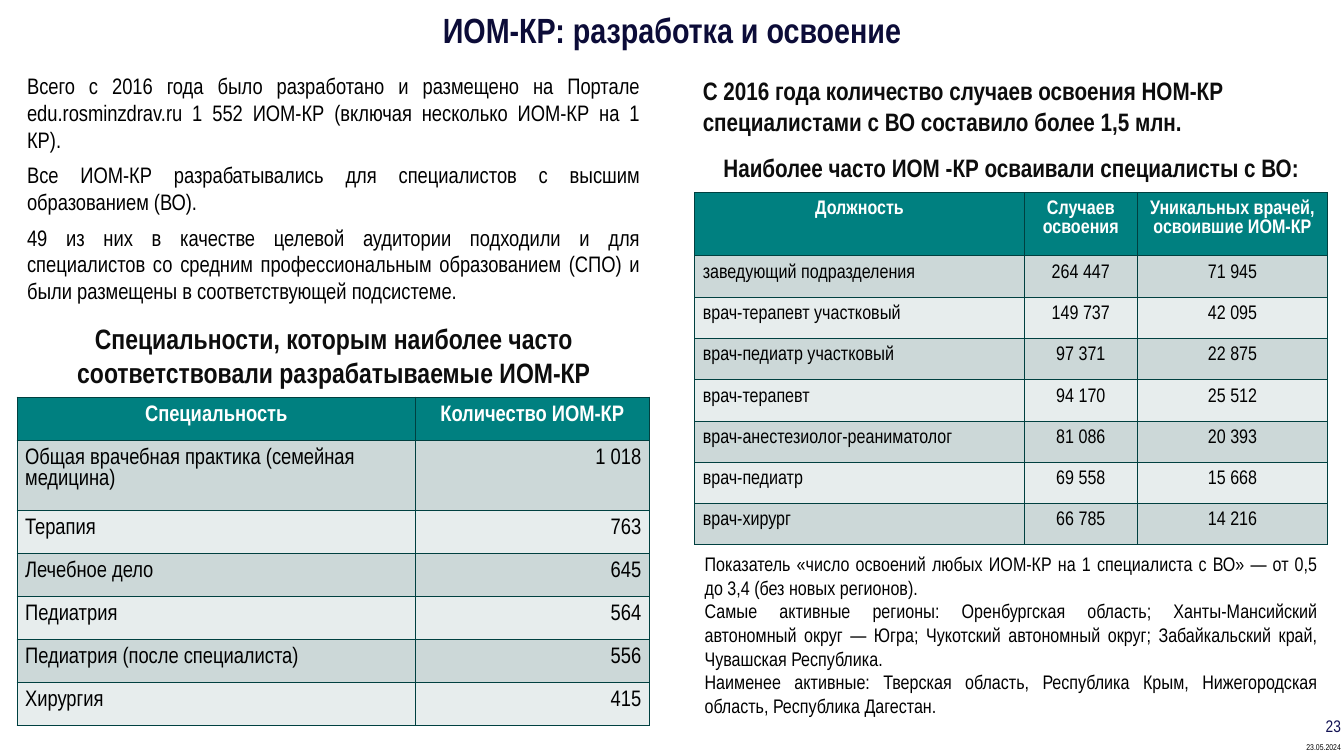
from dataclasses import dataclass

from lxml import etree
from pptx import Presentation
from pptx.dml.color import RGBColor
from pptx.enum.text import MSO_ANCHOR, MSO_AUTO_SIZE, PP_ALIGN
from pptx.oxml.ns import qn
from pptx.slide import Slide
from pptx.table import _Cell
from pptx.text.text import _Paragraph
from pptx.util import Inches, Pt

LEFT, CENTER, RIGHT, JUSTIFY = PP_ALIGN.LEFT, PP_ALIGN.CENTER, PP_ALIGN.RIGHT, PP_ALIGN.JUSTIFY
TOP, MIDDLE = MSO_ANCHOR.TOP, MSO_ANCHOR.MIDDLE
GROW = MSO_AUTO_SIZE.SHAPE_TO_FIT_TEXT

FONT = "Arial Narrow"
COLORS = {
    "title": "0C0C38",
    "heading": "0D0D0D",
    "text": "000000",
    "number": "131354",
    "header": "008080",
    "header_text": "FFFFFF",
    "odd": "CCD8D8",
    "even": "E7EDED",
    "border": "004040",
}
LEFT_X, RIGHT_X, COLUMN_W = 0.17, 6.89, 6.28
ROW_H = 0.41
TIGHT = (0.08, 0.08, 0.08, 0.08)
BODY = (0.1, 0.05, 0.1, 0.05)
FOOTER = (0.04, 0.04, 0.04, 0.04)


@dataclass
class TextBlock:
    box: tuple[float, float, float, float]
    paragraphs: list[str]
    size: float
    color: str = "heading"
    bold: bool = True
    align: PP_ALIGN = CENTER
    anchor: MSO_ANCHOR = MIDDLE
    insets: tuple[float, float, float, float] = TIGHT
    space_after: float = 0
    wrap: bool = True


@dataclass
class DataTable:
    left: float
    top: float
    widths: list[float]
    size: float
    value_align: PP_ALIGN
    header: list[str]
    rows: list[tuple[str, ...]]


BLOCKS = [
    TextBlock((12.91, 7.32, 0.43, 0.18), ["23.05.2024"], 6, "text", False, RIGHT, TOP, FOOTER, wrap=False),
    TextBlock((LEFT_X, 0, 12.99, 0.58), ["ИОМ‑КР: разработка и освоение"], 25, "title"),
    TextBlock((12.91, 7.06, 0.43, 0.24), ["23"], 12, "number", False, RIGHT, insets=(0.04, 0.04, 0.04, 0)),
    TextBlock(
        (LEFT_X, 3.11, COLUMN_W, 0.83),
        ["Специальности, которым наиболее часто соответствовали разрабатываемые ИОМ-КР"],
        20,
    ),
    TextBlock(
        (LEFT_X, 0.67, COLUMN_W, 2.42),
        [
            "Всего с 2016 года было разработано и размещено на Портале edu.rosminzdrav.ru "
            "1 552 ИОМ‑КР (включая несколько ИОМ-КР на 1 КР).",
            "Все ИОМ-КР разрабатывались для специалистов с высшим образованием (ВО).",
            "49 из них в качестве целевой аудитории подходили и для специалистов со средним "
            "профессиональным образованием (СПО) и были размещены в соответствующей подсистеме.",
        ],
        16, "text", False, JUSTIFY, TOP, BODY, space_after=6,
    ),
    TextBlock(
        (RIGHT_X, 1.43, COLUMN_W, 0.46),
        ["Наиболее часто ИОМ -КР осваивали специалисты с ВО:"],
        18,
    ),
    TextBlock(
        (RIGHT_X, 0.67, COLUMN_W, 0.76),
        ["С 2016 года количество случаев освоения НОМ-КР специалистами с ВО составило более 1,5 млн."],
        18, align=LEFT,
    ),
    TextBlock(
        (RIGHT_X, 5.43, COLUMN_W, 1.75),
        [
            "Показатель «число освоений любых ИОМ-КР на 1 специалиста с ВО» — от 0,5 до 3,4 "
            "(без новых регионов).",
            "Самые активные регионы: Оренбургская область; Ханты-Мансийский автономный округ — Югра; "
            "Чукотский автономный округ; Забайкальский край, Чувашская Республика.",
            "Наименее активные: Тверская область, Республика Крым, Нижегородская область, "
            "Республика Дагестан.",
        ],
        14, "text", False, JUSTIFY, TOP, BODY,
    ),
]

TABLES = [
    DataTable(
        LEFT_X, 3.94, [3.95, 2.32], 16, RIGHT,
        ["Специальность", "Количество ИОМ‑КР"],
        [
            ("Общая врачебная практика (семейная медицина)", "1 018"),
            ("Терапия", "763"),
            ("Лечебное дело", "645"),
            ("Педиатрия", "564"),
            ("Педиатрия (после специалиста)", "556"),
            ("Хирургия", "415"),
        ],
    ),
    DataTable(
        RIGHT_X, 1.91, [3.27, 1.12, 1.89], 14, CENTER,
        ["Должность", "Случаев освоения", "Уникальных врачей, освоившие ИОМ‑КР"],
        [
            ("заведующий подразделения", "264 447", "71 945"),
            ("врач‑терапевт участковый", "149 737", "42 095"),
            ("врач-педиатр участковый", "97 371", "22 875"),
            ("врач-терапевт", "94 170", "25 512"),
            ("врач-анестезиолог-реаниматолог", "81 086", "20 393"),
            ("врач-педиатр", "69 558", "15 668"),
            ("врач-хирург", "66 785", "14 216"),
        ],
    ),
]


def style(paragraph: _Paragraph, size: float, color: str, bold: bool, align: PP_ALIGN) -> None:
    paragraph.alignment = align
    paragraph.font.name = FONT
    paragraph.font.size = Pt(size)
    paragraph.font.bold = bold
    paragraph.font.color.rgb = RGBColor.from_string(COLORS[color])


def draw_text(slide: Slide, block: TextBlock) -> None:
    frame = slide.shapes.add_textbox(*map(Inches, block.box)).text_frame
    frame.word_wrap = block.wrap
    frame.auto_size = GROW
    frame.vertical_anchor = block.anchor
    frame.margin_left, frame.margin_top, frame.margin_right, frame.margin_bottom = map(Inches, block.insets)
    frame.text = "\n".join(block.paragraphs)
    for paragraph in frame.paragraphs:
        style(paragraph, block.size, block.color, block.bold, block.align)
        paragraph.space_after = Pt(block.space_after)


def add_borders(cell: _Cell) -> None:
    properties = cell._tc.get_or_add_tcPr()
    for position, side in enumerate(("lnL", "lnR", "lnT", "lnB")):
        line = etree.Element(qn(f"a:{side}"), w=str(Pt(0.75)))
        fill = etree.SubElement(line, qn("a:solidFill"))
        etree.SubElement(fill, qn("a:srgbClr"), val=COLORS["border"])
        properties.insert(position, line)


def draw_table(slide: Slide, data: DataTable) -> None:
    lines = [data.header, *data.rows]
    table = slide.shapes.add_table(
        len(lines), len(data.widths), Inches(data.left), Inches(data.top),
        Inches(sum(data.widths)), Inches(ROW_H * len(lines)),
    ).table
    for column, width in zip(table.columns, data.widths):
        column.width = Inches(width)
    for r, line in enumerate(lines):
        is_header = r == 0
        fill = "header" if is_header else "odd" if r % 2 else "even"
        for c, value in enumerate(line):
            cell = table.cell(r, c)
            cell.text = value
            cell.margin_left, cell.margin_top, cell.margin_right, cell.margin_bottom = map(Inches, TIGHT)
            cell.fill.solid()
            cell.fill.fore_color.rgb = RGBColor.from_string(COLORS[fill])
            add_borders(cell)
            align = CENTER if is_header else data.value_align if c else LEFT
            color = "header_text" if is_header else "text"
            style(cell.text_frame.paragraphs[0], data.size, color, is_header, align)


def main() -> None:
    presentation = Presentation()
    presentation.slide_width = Inches(13.33)
    presentation.slide_height = Inches(7.5)
    slide = presentation.slides.add_slide(presentation.slide_layouts[6])
    for block in BLOCKS:
        draw_text(slide, block)
    for data in TABLES:
        draw_table(slide, data)
    presentation.save("out.pptx")


if __name__ == "__main__":
    main()
